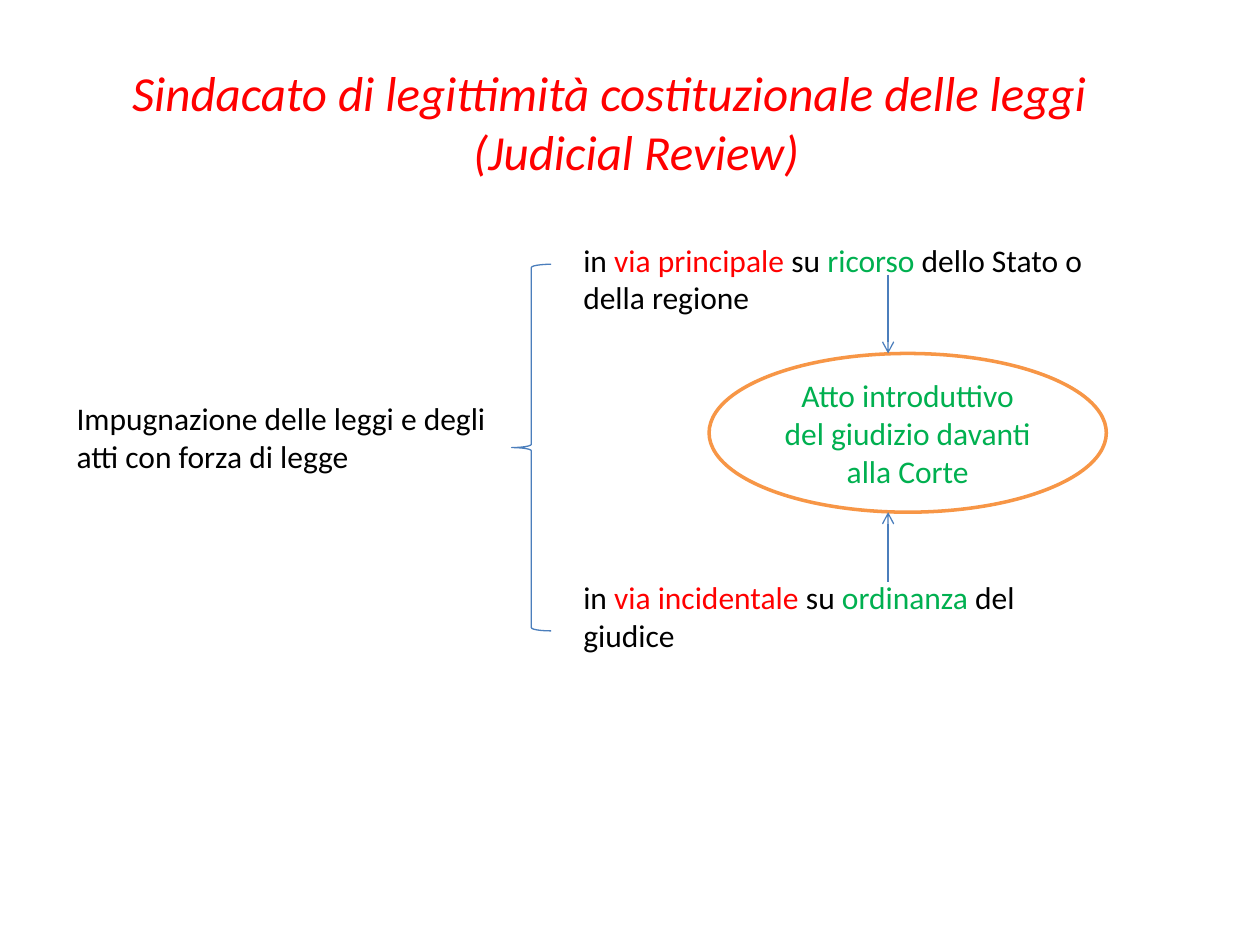
import pptx
import pptx.util
import pptx.dml.color
import pptx.enum.shapes
import pptx.enum.text
import pptx.oxml
from pptx.oxml.ns import qn

Pt = pptx.util.Pt
SHAPE = pptx.enum.shapes.MSO_SHAPE
CENTER = pptx.enum.text.PP_ALIGN.CENTER
BLACK, RED, GREEN = "000000", "FF0000", "00B050"
BLUE, ORANGE, WHITE = "4B7EBC", "F79646", "FFFFFF"


def rgb(color):
    return pptx.dml.color.RGBColor.from_string(color)


def write(tf, parts, size=18, italic=False, align=None):
    """Fill the frame with one paragraph of (text, colour) runs."""
    tf.word_wrap = True
    p = tf.paragraphs[0]
    p.alignment = align
    for text, color in parts:
        r = p.add_run()
        r.text = text
        r.font.name = "Calibri"
        r.font.size = Pt(size)
        r.font.italic = italic
        r.font.color.rgb = rgb(color)


def add_text(s, box, parts, **style):
    sp = s.shapes.add_textbox(*map(Pt, box))
    write(sp.text_frame, parts, **style)


def add_outline(s, kind, box, color, width):
    sp = s.shapes.add_shape(kind, *map(Pt, box))
    sp.shadow.inherit = False
    sp.line.color.rgb = rgb(color)
    sp.line.width = Pt(width)
    return sp


def add_brace(s, box):
    add_outline(s, SHAPE.LEFT_BRACE, box, BLUE, 0.75).fill.background()


def add_act(s, box):
    sp = add_outline(s, SHAPE.OVAL, box, ORANGE, 2)
    sp.fill.solid()
    sp.fill.fore_color.rgb = rgb(WHITE)
    sp.text_frame.vertical_anchor = pptx.enum.text.MSO_ANCHOR.MIDDLE
    write(sp.text_frame,
          [("Atto introduttivo del giudizio davanti alla Corte", GREEN)],
          align=CENTER)


def add_arrow(s, x, y1, y2):
    c = s.shapes.add_connector(pptx.enum.shapes.MSO_CONNECTOR.STRAIGHT,
                               Pt(x), Pt(y1), Pt(x), Pt(y2))
    c.line.color.rgb = rgb(BLUE)
    c.line.width = Pt(0.75)
    ln = c.line._get_or_add_ln()
    tail = pptx.oxml.xmlchemy.OxmlElement("a:tailEnd")
    tail.set("type", "arrow")
    ln.append(tail)
    ln.getparent().append(pptx.oxml.xmlchemy.OxmlElement("a:effectLst"))


def build_scheme(s, left, top, width, height):
    """Topic, brace, the two routes and the act that both lead to."""
    route_left = left + 289.5
    route_bottom = top + height - 51
    add_text(s, (left, top + 90.7, 249, 51),
             [("Impugnazione delle leggi e degli atti con forza di legge", BLACK)])
    add_brace(s, (left + 255.7, top + 17, 22.5, 209.5))
    add_text(s, (route_left, top, 300, 51),
             [("in ", BLACK), ("via principale", RED), (" su ", BLACK),
              ("ricorso", GREEN), (" dello Stato o della regione", BLACK)])
    add_text(s, (route_left, route_bottom, 289.5, 51),
             [("in ", BLACK), ("via incidentale ", RED), ("su ", BLACK),
              ("ordinanza", GREEN), (" del giudice", BLACK)])
    act_top, act_height = top + 68, 90.7
    add_act(s, (left + width - 227, act_top, 227, act_height))
    arrow_x = left + 470.8
    add_arrow(s, arrow_x, top + 23, act_top)
    add_arrow(s, arrow_x, route_bottom + 5.5, act_top + act_height)


def main():
    prs = pptx.Presentation()
    prs.slide_width, prs.slide_height = Pt(720), Pt(540)
    s = prs.slides.add_slide(prs.slide_layouts[6])
    add_text(s, (60, 32, 607, 75),
             [("Sindacato di legittimità costituzionale delle leggi \t(Judicial Review)", RED)],
             size=28, italic=True, align=CENTER)
    build_scheme(s, 36.7, 134, 595.5, 244)
    prs.save("out.pptx")


if __name__ == "__main__":
    main()
